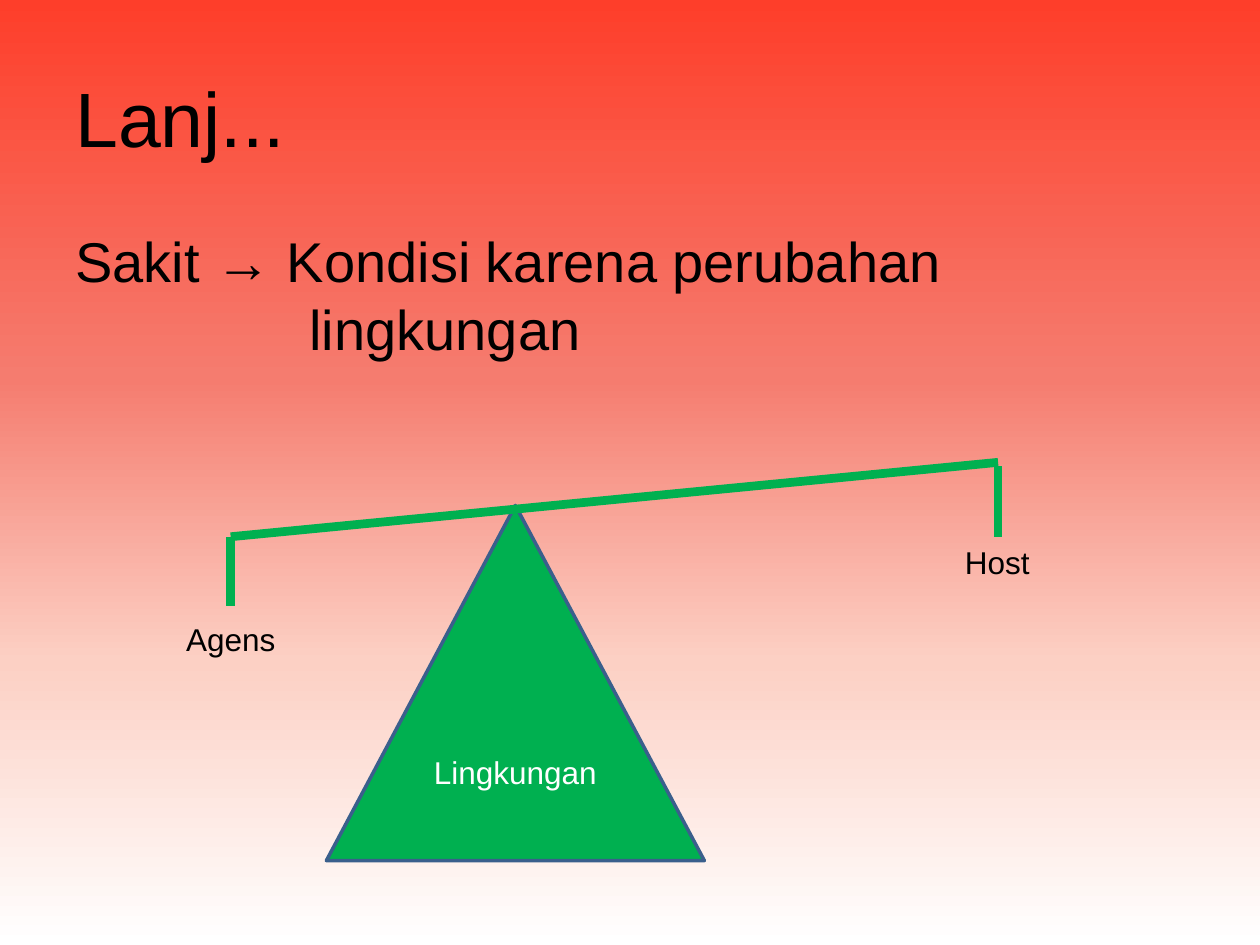
from lxml import etree
from pptx import Presentation
from pptx import util as u
from pptx.dml.color import RGBColor
from pptx.enum import shapes, text
from pptx.oxml.ns import qn

COLOURS = {"ink": "000000", "paper": "FFFFFF", "green": "00B050", "edge": "3A5F8C"}
GRADIENT = {0: "FE3E2A", 40: "F57C6F", 70: "FCD0C4", 100: "FFFFFF"}
FONT = "Arial"


def colour(name):
    """Return the named colour."""
    return RGBColor.from_string(COLOURS[name])


def paint_background(slide):
    """Fill the background with a gradient running from top to bottom."""
    fill = slide.background.fill
    fill.gradient()
    fill.gradient_angle = 270
    stops = slide.element.find(".//" + qn("a:gsLst"))
    for stop in list(stops):
        stops.remove(stop)
    for percent, value in GRADIENT.items():
        stop = etree.SubElement(stops, qn("a:gs"), pos=str(percent * 1000))
        etree.SubElement(stop, qn("a:srgbClr"), val=value)


def write(shape, content, size, ink="ink", align=text.PP_ALIGN.LEFT, anchor=text.MSO_ANCHOR.TOP):
    """Write one run in a shape and return its paragraph."""
    frame = shape.text_frame
    frame.word_wrap = True
    frame.vertical_anchor = anchor
    paragraph = frame.paragraphs[0]
    paragraph.alignment = align
    run = paragraph.add_run()
    run.text = content
    run.font.name = FONT
    run.font.size = u.Pt(size)
    run.font.color.rgb = colour(ink)
    return paragraph


def add_text(parent, box, content, size, **style):
    """Add a text box and return its paragraph."""
    shape = parent.shapes.add_textbox(*map(u.Cm, box))
    return write(shape, content, size, **style)


def add_bar(parent, start, end):
    """Add a thick green bar of the balance."""
    bar = parent.shapes.add_connector(
        shapes.MSO_CONNECTOR.STRAIGHT, *map(u.Cm, start + end))
    bar.line.color.rgb = colour("green")
    bar.line.width = u.Pt(5)
    etree.SubElement(bar.element.spPr, qn("a:effectLst"))


def add_pivot(parent, box, content):
    """Add the triangle that carries the beam."""
    pivot = parent.shapes.add_shape(
        shapes.MSO_SHAPE.ISOSCELES_TRIANGLE, *map(u.Cm, box))
    pivot.shadow.inherit = False
    pivot.fill.solid()
    pivot.fill.fore_color.rgb = colour("green")
    pivot.line.color.rgb = colour("edge")
    pivot.line.width = u.Pt(2)
    write(pivot, content, 18, "paper", text.PP_ALIGN.CENTER, text.MSO_ANCHOR.MIDDLE)


def add_balance(slide):
    """Add the tilted balance with its two labelled arms."""
    group = slide.shapes.add_group_shape()
    left, right = (4.65, 10.82), (20.12, 9.32)
    add_pivot(group, (6.58, 10.19, 7.62, 7.16), "Lingkungan")
    add_bar(group, left, right)
    add_bar(group, left, (4.65, 12.22))
    add_bar(group, (20.12, 9.4), (20.12, 10.82))
    for x, y, label in ((1.9, 12.37, "Agens"), (17.35, 10.82, "Host")):
        add_text(group, (x, y, 5.51, 1.02), label, 18, align=text.PP_ALIGN.CENTER)


def main():
    """Build the slide and save it."""
    presentation = Presentation()
    presentation.slide_width = u.Cm(25.4)
    presentation.slide_height = u.Cm(19.05)
    slide = presentation.slides.add_slide(presentation.slide_layouts[6])
    paint_background(slide)
    add_text(slide, (1.27, 0.76, 22.86, 3.18), "Lanj...", 44, anchor=text.MSO_ANCHOR.MIDDLE)
    paragraph = add_text(
        slide, (1.27, 4.45, 22.86, 3.38), "Sakit → Kondisi karena perubahan lingkungan", 32)
    paragraph.space_before = u.Pt(6.4)
    properties = paragraph._p.get_or_add_pPr()
    properties.set("marL", str(u.Cm(4.72)))
    properties.set("indent", str(-u.Cm(4.72)))
    add_balance(slide)
    presentation.save("out.pptx")


if __name__ == "__main__":
    main()
